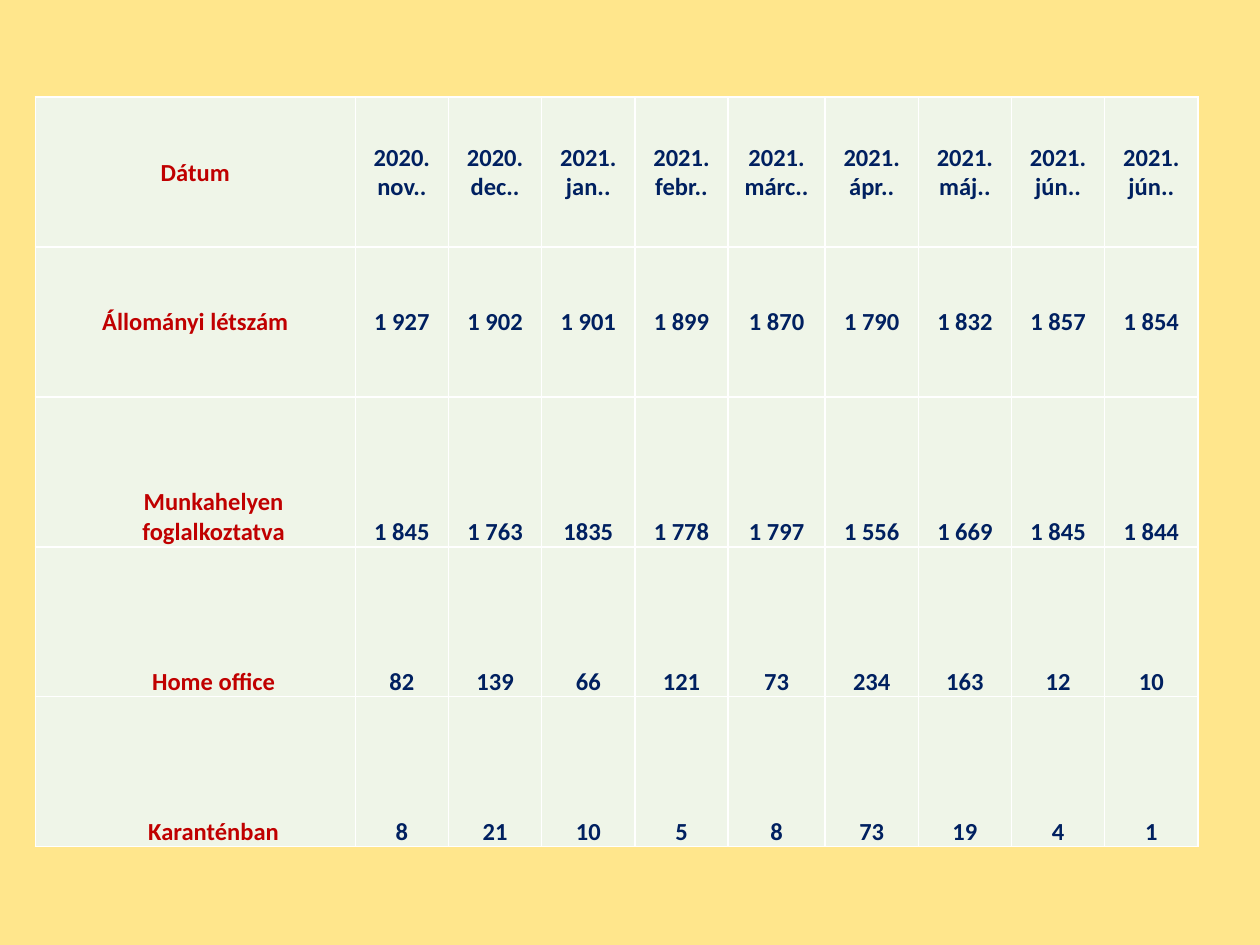
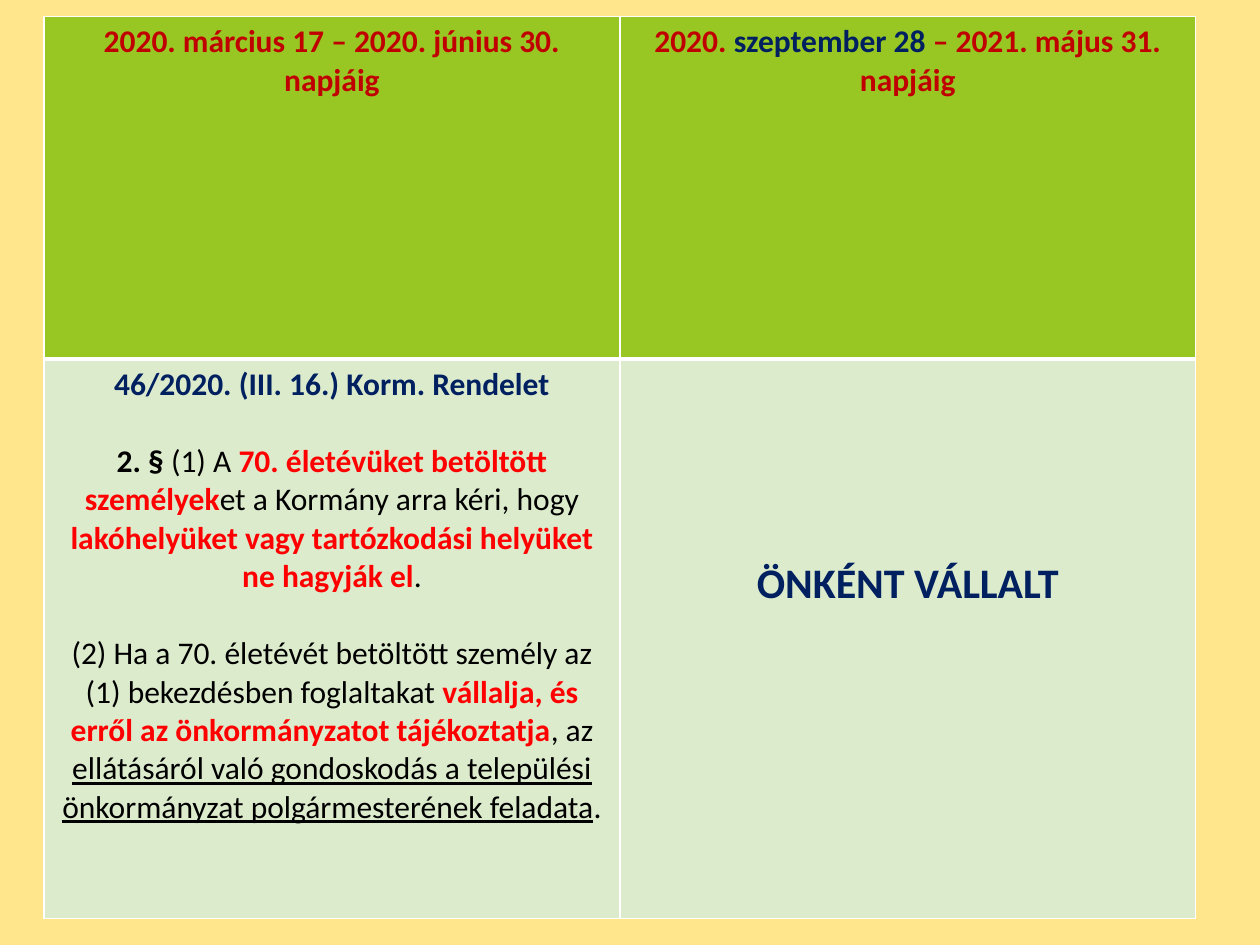
from lxml import etree
from pptx import Presentation
from pptx.dml.color import RGBColor
from pptx.enum.text import MSO_ANCHOR, PP_ALIGN
from pptx.oxml.ns import qn
from pptx.util import Inches, Pt

CENTER = PP_ALIGN.CENTER
TOP, MIDDLE, BOTTOM = MSO_ANCHOR.TOP, MSO_ANCHOR.MIDDLE, MSO_ANCHOR.BOTTOM
FONT = "Calibri"
COLORS = {
    "background": "FFE68C", "border": "FFFFFF", "pale": "EFF5E8",
    "green": "98C723", "light": "DDEBCD", "dark_red": "C00000",
    "navy": "002060", "red": "FF0000", "black": "000000",
}


def add_table_slide(prs, left, top, widths, heights):
    s = prs.slides.add_slide(prs.slide_layouts[6])
    s.background.fill.solid()
    s.background.fill.fore_color.rgb = RGBColor.from_string(COLORS["background"])
    table = s.shapes.add_table(
        len(heights), len(widths), Inches(left), Inches(top),
        Inches(sum(widths)), Inches(sum(heights))).table
    table.first_row = False
    table.horz_banding = False
    for column, width in zip(table.columns, widths):
        column.width = Inches(width)
    for row, height in zip(table.rows, heights):
        row.height = Inches(height)
    return table


def style_cell(cell, fill, anchor, top_line=1, bottom_line=1):
    tcPr = cell._tc.get_or_add_tcPr()
    for side, width in (("L", 1), ("R", 1), ("T", top_line), ("B", bottom_line)):
        ln = etree.SubElement(tcPr, qn(f"a:ln{side}"), w=str(Pt(width)))
        solid = etree.SubElement(ln, qn("a:solidFill"))
        etree.SubElement(solid, qn("a:srgbClr"), val=COLORS["border"])
    cell.fill.solid()
    cell.fill.fore_color.rgb = RGBColor.from_string(COLORS[fill])
    cell.vertical_anchor = anchor


prs = Presentation()
prs.slide_width, prs.slide_height = Inches(10), Inches(7.5)

staff_rows = [
    ["Dátum", "2020. nov..", "2020. dec..", "2021. jan..", "2021. febr..",
     "2021. márc..", "2021. ápr..", "2021. máj..", "2021. jún..", "2021. jún.."],
    ["Állományi létszám", "1 927", "1 902", "1 901", "1 899", "1 870",
     "1 790", "1 832", "1 857", "1 854"],
    ["Munkahelyen foglalkoztatva", "1 845", "1 763", "1835", "1 778", "1 797",
     "1 556", "1 669", "1 845", "1 844"],
    ["Home office", "82", "139", "66", "121", "73", "234", "163", "12", "10"],
    ["Karanténban", "8", "21", "10", "5", "8", "73", "19", "4", "1"],
]
staff_widths = [2.54] + [0.74] * 4 + [0.77] + [0.74] * 4
table = add_table_slide(prs, 0.28, 0.77, staff_widths, [1.19] * 5)
for i, row in enumerate(staff_rows):
    for j, text in enumerate(row):
        cell = table.cell(i, j)
        style_cell(cell, "pale", MIDDLE if i < 2 else BOTTOM)
        cell.margin_left = Inches(0.3 if j == 0 and i >= 2 else 0.01)
        cell.margin_top = cell.margin_right = Inches(0.01)
        cell.margin_bottom = 0
        p = cell.text_frame.paragraphs[0]
        p.text = text
        p.alignment = CENTER
        p.font.name, p.font.size, p.font.bold = FONT, Pt(14), True
        color = COLORS["navy" if j else "dark_red"]
        p.font.color.rgb = RGBColor.from_string(color)

RED, NAVY = ("dark_red", True, False), ("navy", True, False)
KEY, PLAIN = ("red", True, False), ("black", False, False)
STRONG, UNDERLINED = ("black", True, False), ("black", False, True)
spring_period = [[("2020. március 17 – 2020. június 30. napjáig", RED)]]
autumn_period = [[("2020. ", RED), ("szeptember 28 ", NAVY),
                  ("– 2021. május 31. napjáig", RED)]]
decree = [
    [("46/2020. (III. 16.) Korm. Rendelet", NAVY)],
    [("2. § ", STRONG), ("(1) A ", PLAIN),
     ("70. életévüket betöltött személyek", KEY),
     ("et a Kormány arra kéri, hogy ", PLAIN),
     ("lakóhelyüket vagy tartózkodási helyüket ne hagyják el", KEY),
     (".", PLAIN)],
    [("(2) Ha a 70. életévét betöltött személy az (1) bekezdésben foglaltakat ", PLAIN),
     ("vállalja, és erről az önkormányzatot tájékoztatja", KEY),
     (", az ", PLAIN),
     ("ellátásáról való gondoskodás a települési önkormányzat "
      "polgármesterének feladata", UNDERLINED),
     (".", PLAIN)],
]
voluntary = [[("ÖNKÉNT VÁLLALT", NAVY)]]
period_cells = [
    (0, 0, spring_period, 18, 0.05), (0, 1, autumn_period, 18, 0.05),
    (1, 0, decree, 18, 0.05), (1, 1, voluntary, 24, 1.58),
]
table = add_table_slide(prs, 0.35, 0.13, [4.57] * 2, [2.72, 4.44])
for i, j, paragraphs, size, margin_top in period_cells:
    cell = table.cell(i, j)
    style_cell(cell, "light" if i else "green", TOP,
               top_line=3 if i else 1, bottom_line=1 if i else 3)
    cell.margin_top = Inches(margin_top)
    tf = cell.text_frame
    for n, runs in enumerate(paragraphs):
        p = tf.add_paragraph() if n else tf.paragraphs[0]
        p.alignment = CENTER
        if n:
            p.space_before = Pt(22)
        p.font.name, p.font.size = FONT, Pt(size)
        for text, (color, bold, underline) in runs:
            r = p.add_run()
            r.text = text
            r.font.bold = bold
            r.font.color.rgb = RGBColor.from_string(COLORS[color])
            if underline:
                r.font.underline = True

prs.save("out.pptx")
